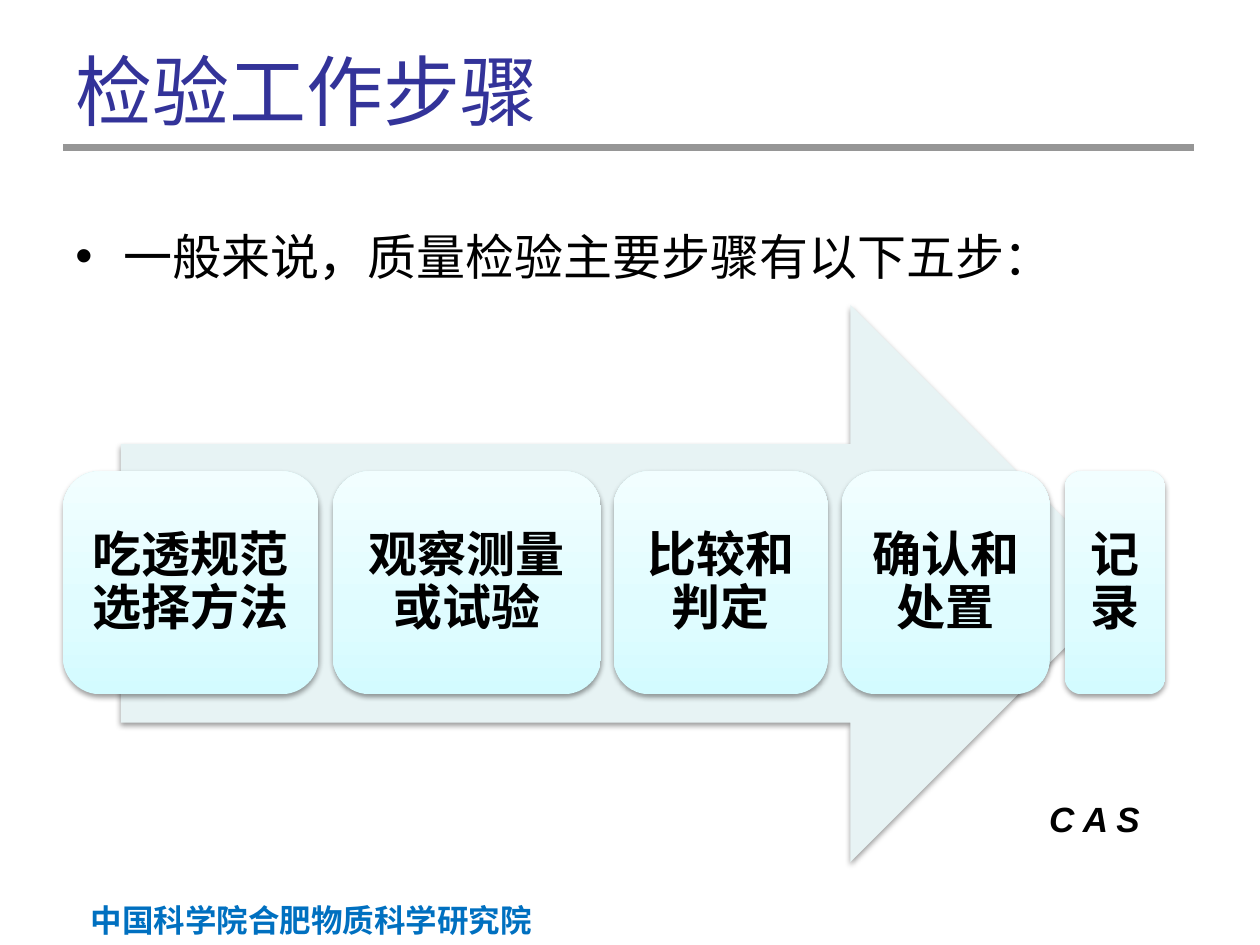
import copy

import pptx
import pptx.dml.color
import pptx.enum.dml
import pptx.enum.lang
import pptx.enum.shapes
import pptx.enum.text
import pptx.oxml
import pptx.oxml.ns
import pptx.util
from pptx.util import Inches

COLORS = {
    "title": "333399",
    "rule": "969696",
    "institute": "0070C0",
    "text": "000000",
    "arrow": "E7F3F4",
    "shadow": "000000",
    "step_bottom": "D3FBFF",
    "step_middle": "DFFCFF",
    "step_top": "F2FEFF",
}
NS = 'xmlns:a="http://schemas.openxmlformats.org/drawingml/2006/main"'
STEP_TOP, STEP_HEIGHT = 3.74, 1.77
# left, width, label
STEPS = [
    (0.5, 2.03, "吃透规范选择方法"),
    (2.64, 2.13, "观察测量或试验"),
    (4.87, 1.7, "比较和判定"),
    (6.68, 1.65, "确认和处置"),
    (8.45, 0.8, "记录"),
]
ALIGN = pptx.enum.text.PP_ALIGN
SHAPE = pptx.enum.shapes.MSO_SHAPE


def rgb(name):
    return pptx.dml.color.RGBColor.from_string(COLORS[name])


def write_text(frame, text, size, color="text", font="Arial", bold=False,
               italic=False, align=ALIGN.LEFT, wrap=True, bullet=False):
    frame.word_wrap = wrap
    para = frame.paragraphs[0]
    para.alignment = align
    if bullet:
        properties = para._p.get_or_add_pPr()
        properties.set("marL", str(Inches(0.38)))
        properties.set("indent", str(-Inches(0.38)))
        properties.append(pptx.oxml.parse_xml(f'<a:buFont {NS} typeface="Arial"/>'))
        properties.append(pptx.oxml.parse_xml(f'<a:buChar {NS} char="•"/>'))
    span = para.add_run()
    span.text = text
    span.font.size = pptx.util.Pt(size)
    span.font.name = font
    span.font.bold = bold
    span.font.italic = italic
    span.font.color.rgb = rgb(color)
    span.font.language_id = pptx.enum.lang.MSO_LANGUAGE_ID.SIMPLIFIED_CHINESE
    if font != "Arial":
        span._r.get_or_add_rPr().append(
            pptx.oxml.parse_xml(f'<a:ea {NS} typeface="{font}"/>'))
    return para


def add_text(page, left, top, width, height, text, **style):
    box = page.shapes.add_textbox(
        Inches(left), Inches(top), Inches(width), Inches(height))
    write_text(box.text_frame, text, **style)


def add_shadowed_shape(page, kind, left, top, width, height):
    shape = page.shapes.add_shape(
        kind, Inches(left), Inches(top), Inches(width), Inches(height))
    shape.line.fill.background()
    shape.shadow.inherit = False
    effects = shape._element.spPr.find(pptx.oxml.ns.qn("a:effectLst"))
    effects.append(pptx.oxml.parse_xml(
        f'<a:outerShdw {NS} blurRad="40000" dist="20000" dir="5400000" rotWithShape="0">'
        f'<a:srgbClr val="{COLORS["shadow"]}"><a:alpha val="38000"/></a:srgbClr>'
        '</a:outerShdw>'))
    return shape


def fill_step(shape):
    """Fill with a three-stop gradient that runs from bottom to top."""
    shape.fill.gradient()
    shape.fill.gradient_angle = 90
    stop_list = shape._element.spPr.find(".//" + pptx.oxml.ns.qn("a:gsLst"))
    stop_list.insert(1, copy.deepcopy(stop_list[0]))
    names = ("step_bottom", "step_middle", "step_top")
    for stop, position, name in zip(shape.fill.gradient_stops, (0, 0.35, 1), names):
        stop.position = position
        stop.color.rgb = rgb(name)


def add_step(page, left, width, label):
    step = add_shadowed_shape(
        page, SHAPE.ROUNDED_RECTANGLE, left, STEP_TOP, width, STEP_HEIGHT)
    fill_step(step)
    frame = step.text_frame
    frame.margin_left = frame.margin_right = Inches(0.12)
    frame.margin_top = frame.margin_bottom = Inches(0.12)
    frame.vertical_anchor = pptx.enum.text.MSO_ANCHOR.MIDDLE
    para = write_text(frame, label, size=28, bold=True, align=ALIGN.CENTER)
    para.line_spacing = 0.9


def add_rule(page, left, right, top):
    rule = page.shapes.add_connector(
        pptx.enum.shapes.MSO_CONNECTOR.STRAIGHT,
        Inches(left), Inches(top), Inches(right), Inches(top))
    rule.line.color.rgb = rgb("rule")
    rule.line.width = pptx.util.Pt(3.6)
    rule._element.spPr.append(pptx.oxml.parse_xml(f"<a:effectLst {NS}/>"))


def main():
    deck = pptx.Presentation()
    deck.slide_width, deck.slide_height = Inches(10), Inches(7.5)
    page = deck.slides.add_slide(deck.slide_layouts[6])

    add_rule(page, 0.5, 9.48, 1.17)
    add_text(page, 0.59, 7.1, 3.73, 0.4, "中国科学院合肥物质科学研究院",
             size=18, color="institute", bold=True, align=ALIGN.RIGHT)
    add_text(page, 8.15, 6.28, 1.02, 0.43, " C A S",
             size=20, bold=True, italic=True, wrap=False)
    add_text(page, 0.5, 0.3, 9, 1.25, "检验工作步骤",
             size=44, color="title", font="Noto Sans CJK JP")
    add_text(page, 0.5, 1.75, 9, 1, "一般来说，质量检验主要步骤有以下五步：",
             size=28, font="Noto Sans CJK SC", bullet=True)

    arrow = add_shadowed_shape(page, SHAPE.RIGHT_ARROW, 0.96, 2.42, 8, 4.42)
    arrow.fill.solid()
    arrow.fill.fore_color.rgb = rgb("arrow")
    for left, width, label in STEPS:
        add_step(page, left, width, label)

    deck.save("out.pptx")


if __name__ == "__main__":
    main()
